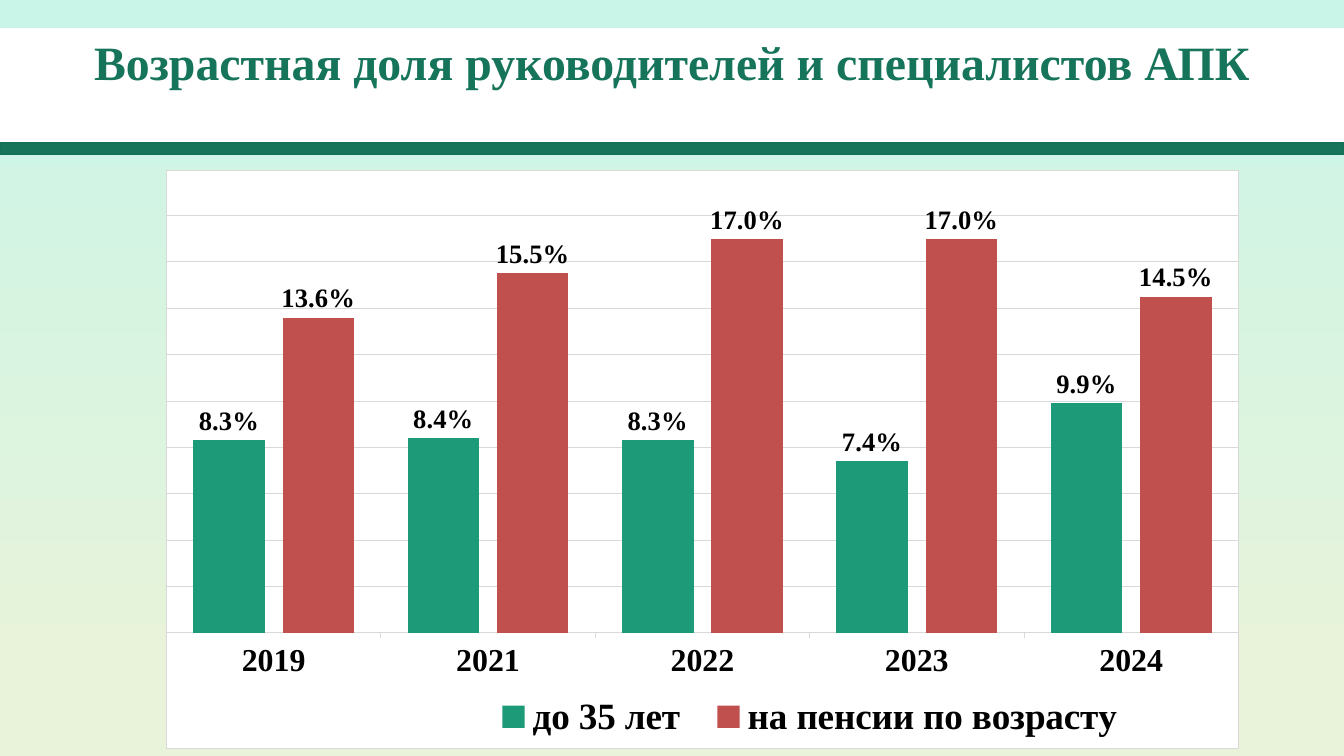
from lxml import etree
from pptx import Presentation
from pptx.chart.data import CategoryChartData
from pptx.dml.color import RGBColor
from pptx.enum.chart import XL_CHART_TYPE, XL_LABEL_POSITION, XL_LEGEND_POSITION, XL_TICK_MARK
from pptx.enum.shapes import MSO_SHAPE
from pptx.enum.text import MSO_ANCHOR, MSO_AUTO_SIZE, PP_ALIGN
from pptx.oxml import parse_xml
from pptx.oxml.ns import nsdecls, qn
from pptx.util import Emu, Pt

COLUMNS = XL_CHART_TYPE.COLUMN_CLUSTERED
OUTSIDE_END = XL_LABEL_POSITION.OUTSIDE_END
LEGEND_BOTTOM = XL_LEGEND_POSITION.BOTTOM
TICK_OUTSIDE = XL_TICK_MARK.OUTSIDE
RECTANGLE = MSO_SHAPE.RECTANGLE
ANCHOR_TOP = MSO_ANCHOR.TOP
NO_AUTOFIT = MSO_AUTO_SIZE.NONE
CENTER = PP_ALIGN.CENTER

EMU_PER_PX = 914400 / 95.6
TITLE_ONLY_LAYOUT = 5
FONT = "Times New Roman"
COLORS = {
    "mint": "C8F5E8",
    "cream": "E8F3DA",
    "white": "FFFFFF",
    "black": "000000",
    "title": "16745A",
    "bar_edge": "157259",
    "grid": "D9D9D9",
    "young": "1D9A78",
    "retired": "C0504D",
}
YEARS = ["2019", "2021", "2022", "2023", "2024"]
AGE_GROUPS = [
    ("до 35 лет", "young", [0.083, 0.084, 0.083, 0.074, 0.099]),
    ("на пенсии по возрасту", "retired", [0.136, 0.155, 0.17, 0.17, 0.145]),
]


def px(length):
    return Emu(round(length * EMU_PER_PX))


def color(name):
    return RGBColor.from_string(COLORS[name])


def style_font(font, size, color_name="black"):
    font.name = FONT
    font.size = Pt(size)
    font.bold = True
    font.color.rgb = color(color_name)


def fill_solid(fill, color_name):
    fill.solid()
    fill.fore_color.rgb = color(color_name)


def style_line(line, color_name, width):
    line.color.rgb = color(color_name)
    line.width = Pt(width)


def set_background(slide):
    fill = slide.background.fill
    fill.gradient()
    fill.gradient_angle = 270
    stops = [("mint", 0), ("cream", 0.88)]
    for stop, (color_name, position) in zip(fill.gradient_stops, stops):
        stop.color.rgb = color(color_name)
        stop.position = position


def add_title(slide, text, left, top, width, height):
    title = slide.shapes.title
    title.left, title.top = px(left), px(top)
    title.width, title.height = px(width), px(height)
    fill_solid(title.fill, "white")
    frame = title.text_frame
    frame.auto_size = NO_AUTOFIT
    frame.word_wrap = True
    frame.vertical_anchor = ANCHOR_TOP
    paragraph = frame.paragraphs[0]
    paragraph.alignment = CENTER
    run = paragraph.add_run()
    run.text = text
    style_font(run.font, 36, "title")


def add_bar(slide, left, top, width, height):
    bar = slide.shapes.add_shape(RECTANGLE, px(left), px(top), px(width), px(height))
    bar.shadow.inherit = False
    fill_solid(bar.fill, "title")
    style_line(bar.line, "bar_edge", 1)


def set_layout(element, index, inner, **fractions):
    """Give a chart part a manual position in fractions of the chart."""
    for old_layout in element.findall(qn("c:layout")):
        element.remove(old_layout)
    layout = parse_xml(f"<c:layout {nsdecls('c')}><c:manualLayout/></c:layout>")
    settings = {"layoutTarget": "inner"} if inner else {}
    settings.update(xMode="edge", yMode="edge", **fractions)
    for tag, value in settings.items():
        etree.SubElement(layout[0], qn(f"c:{tag}")).set("val", str(value))
    element.insert(index, layout)


def frame_chart(chart_element):
    chart_element.addnext(parse_xml(
        f"<c:spPr {nsdecls('c', 'a')}>"
        f'<a:solidFill><a:srgbClr val="{COLORS["white"]}"/></a:solidFill>'
        f'<a:ln w="{Pt(0.75)}"><a:solidFill><a:srgbClr val="{COLORS["grid"]}"/>'
        "</a:solidFill></a:ln></c:spPr>"
    ))


def style_axes(chart):
    category_axis = chart.category_axis
    category_axis.major_tick_mark = TICK_OUTSIDE
    style_font(category_axis.tick_labels.font, 24)
    style_line(category_axis.format.line, "grid", 0.75)

    value_axis = chart.value_axis
    value_axis.minimum_scale = 0
    value_axis.maximum_scale = 0.18
    value_axis.major_unit = 0.02
    value_axis.has_major_gridlines = True
    style_line(value_axis.major_gridlines.format.line, "grid", 0.75)
    value_axis.visible = False


def style_series(series, color_name):
    fill_solid(series.format.fill, color_name)
    series.invert_if_negative = False
    labels = series.data_labels
    labels.show_value = True
    labels.position = OUTSIDE_END
    labels.number_format = "0.0%"
    labels.number_format_is_linked = False
    style_font(labels.font, 20)


def add_age_chart(slide, left, top, width, height):
    data = CategoryChartData(number_format="0.0%")
    data.categories = YEARS
    for name, _, values in AGE_GROUPS:
        data.add_series(name, values)
    chart = slide.shapes.add_chart(
        COLUMNS, px(left), px(top), px(width), px(height), data
    ).chart
    chart.has_title = False
    chart.font.name = "Calibri"
    chart.font.size = Pt(10)
    chart.font.color.rgb = color("black")

    # Columns and their labels
    plot = chart.plots[0]
    plot.gap_width = 75
    plot.overlap = -25
    plot.vary_by_categories = False
    for series, (_, color_name, _) in zip(plot.series, AGE_GROUPS):
        style_series(series, color_name)
    style_axes(chart)

    # Legend
    chart.has_legend = True
    legend = chart.legend
    legend.position = LEGEND_BOTTOM
    legend.include_in_layout = False
    style_font(legend.font, 28)

    # Frame and inner positions
    chart_element = plot._element.getparent().getparent()
    frame_chart(chart_element)
    set_layout(chart_element.find(qn("c:plotArea")), 0, True, x=0, y=0.078, w=1, h=0.722)
    set_layout(chart_element.find(qn("c:legend")), 1, False, x=0.29, y=0.9, w=0.62, h=0.09)


def main():
    presentation = Presentation()
    presentation.slide_width = px(1344)
    presentation.slide_height = px(756)
    slide = presentation.slides.add_slide(presentation.slide_layouts[TITLE_ONLY_LAYOUT])
    set_background(slide)
    add_title(slide, "Возрастная доля руководителей и специалистов АПК", 0, 28, 1344, 125)
    add_bar(slide, 0, 143, 1344, 11)
    add_age_chart(slide, 166, 170, 1073, 579)
    presentation.save("out.pptx")


if __name__ == "__main__":
    main()
